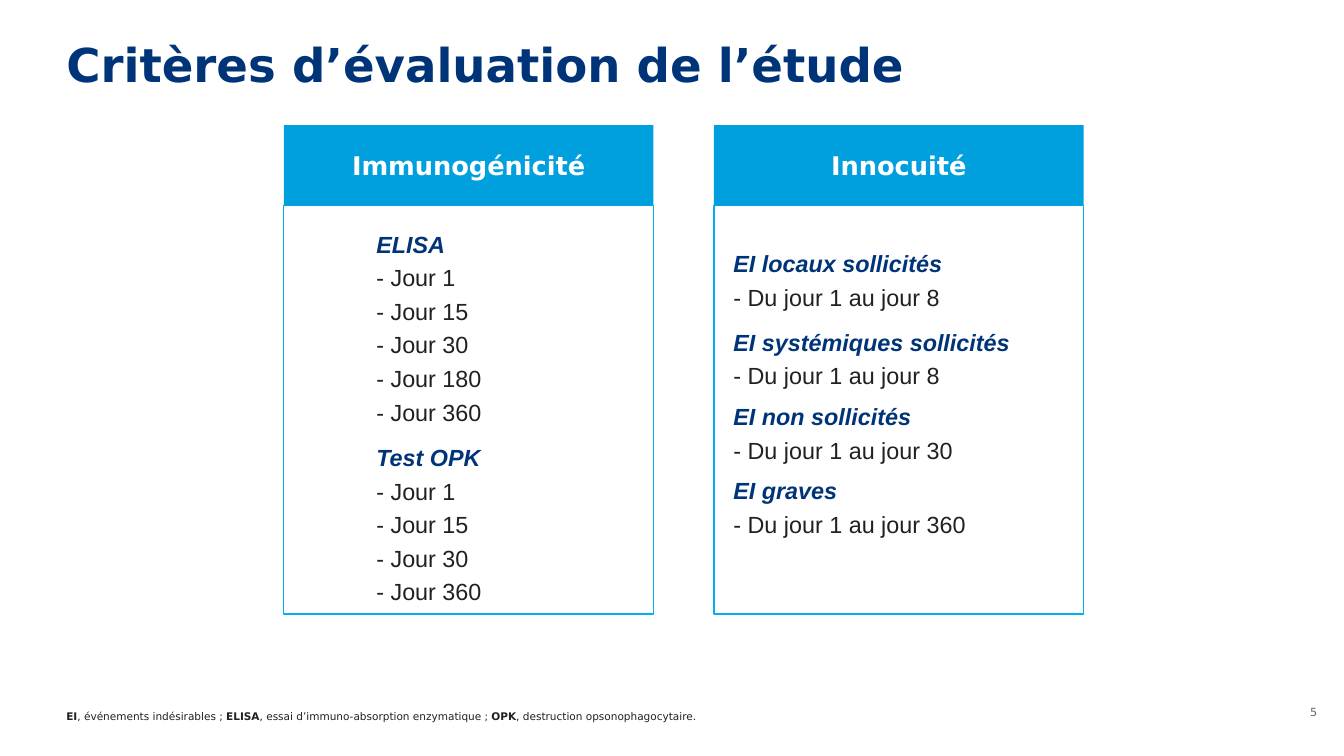
from dataclasses import dataclass

from pptx import Presentation
from pptx.dml.color import RGBColor as Rgb
from pptx.enum import shapes as sh, text as tx
from pptx.util import Inches, Pt


@dataclass(frozen=True)
class Theme:
    """Colours, fonts and type sizes."""
    navy: str = "003479"
    blue: str = "00A0DF"
    edge: str = "00B0F0"
    ink: str = "212121"
    grey: str = "646464"
    white: str = "FFFFFF"
    sans: str = "DejaVu Sans"
    arial: str = "Arial"
    title: float = 40
    head: float = 22
    body: float = 20
    note: float = 9
    page: float = 9.6


T = Theme()
TOP, WIDE, HEAD, TALL = 1.49, 4.4, 0.96, 4.86

ELISA = [1, 15, 30, 180, 360]
OPK = [1, 15, 30, 360]
LEFT = [(name, [f"- Jour\u00a0{d}" for d in days], 10)
        for name, days in (("ELISA", ELISA), ("Test OPK", OPK))]
RIGHT = [(f"EI {name}", [f"- Du jour\u00a01 au jour\u00a0{d}"], gap)
         for name, d, gap in (("locaux sollicités", 8, 10),
                              ("systémiques sollicités", 8, 10),
                              ("non sollicités", 30, 6),
                              ("graves", 360, 6))]
NOTES = [("EI", ", événements indésirables\u00a0; "),
         ("ELISA", ", essai d’immuno-absorption enzymatique\u00a0; "),
         ("OPK", ", destruction opsonophagocytaire.")]


def style(run, size, color, face=T.sans, bold=False, slant=False):
    """Format one run."""
    font = run.font
    font.size, font.name = Pt(size), face
    font.bold, font.italic = bold, slant
    font.color.rgb = Rgb.from_string(color)


def setup(frame, anchor, pad=(0, 0, 0, 0)):
    """Set wrapping, anchor and margins of a text frame."""
    frame.word_wrap = True
    frame.vertical_anchor = anchor
    (frame.margin_left, frame.margin_top,
     frame.margin_right, frame.margin_bottom) = map(Inches, pad)


def box(slide, area, anchor, pad=(0, 0, 0, 0)):
    """Add a text box and return its frame."""
    frame = slide.shapes.add_textbox(*map(Inches, area)).text_frame
    setup(frame, anchor, pad)
    return frame


def rect(slide, area, fill=None, line=None):
    """Add a plain rectangle."""
    shape = slide.shapes.add_shape(sh.MSO_SHAPE.RECTANGLE, *map(Inches, area))
    shape.shadow.inherit = False
    if fill:
        shape.fill.solid()
        shape.fill.fore_color.rgb = Rgb.from_string(fill)
    else:
        shape.fill.background()
    if line:
        shape.line.color.rgb = Rgb.from_string(line)
        shape.line.width = Pt(1)
    else:
        shape.line.fill.background()
    return shape


def card(slide, left, label):
    """Add an outlined panel with a filled header."""
    rect(slide, (left, TOP + HEAD, WIDE, TALL), line=T.edge)
    head = rect(slide, (left, TOP, WIDE, HEAD), fill=T.blue)
    frame = head.text_frame
    frame.text = label
    frame.vertical_anchor = tx.MSO_ANCHOR.MIDDLE
    para = frame.paragraphs[0]
    para.alignment = tx.PP_ALIGN.CENTER
    style(para.runs[0], T.head, T.white, bold=True)


def groups(slide, area, items):
    """Add headed groups of lines, one paragraph per group."""
    frame = box(slide, area, tx.MSO_ANCHOR.TOP, (0.6, 0.05, 0.1, 0.05))
    for i, (name, lines, gap) in enumerate(items):
        para = frame.add_paragraph() if i else frame.paragraphs[0]
        para.text = "\v".join([name, *lines])
        para.line_spacing = 1.2
        para.space_before = Pt(gap if i else 0)
        first, *rest = para.runs
        style(first, T.body, T.navy, T.arial, True, True)
        for run in rest:
            style(run, T.body, T.ink, T.arial)


def title(slide, label):
    """Place and format the title."""
    shape = slide.shapes.title
    shape.left, shape.top, shape.width, shape.height = map(
        Inches, (0.79, 0.5, 13.31, 0.61))
    frame = shape.text_frame
    frame.text = label
    setup(frame, tx.MSO_ANCHOR.TOP)
    para = frame.paragraphs[0]
    para.alignment = tx.PP_ALIGN.LEFT
    para.line_spacing = 0.9
    style(para.runs[0], T.title, T.navy, bold=True)


def footer(slide):
    """Add the abbreviations and the page number."""
    para = box(slide, (0.79, 8.24, 11, 0.36),
               tx.MSO_ANCHOR.BOTTOM).paragraphs[0]
    for pair in NOTES:
        for label, bold in zip(pair, (True, False)):
            run = para.add_run()
            run.text = label
            style(run, T.note, T.ink, bold=bold)
    frame = box(slide, (15.28, 8.26, 0.5, 0.44), tx.MSO_ANCHOR.MIDDLE,
                (0.1, 0.05, 0.1, 0.05))
    frame.text = "5"
    para = frame.paragraphs[0]
    para.alignment = tx.PP_ALIGN.RIGHT
    style(para.runs[0], T.page, T.grey)


def main():
    """Build and save the slide."""
    deck = Presentation()
    deck.slide_width, deck.slide_height = Inches(16), Inches(9)
    slide = deck.slides.add_slide(deck.slide_layouts[5])
    title(slide, "Critères d’évaluation de l’étude")
    card(slide, 3.38, "Immunogénicité")
    card(slide, 8.5, "Innocuité")
    groups(slide, (3.88, 2.62, 3.62, 5.22), LEFT)
    groups(slide, (8.13, 2.85, 4.02, 3.63), RIGHT)
    footer(slide)
    deck.save("out.pptx")


if __name__ == "__main__":
    main()
